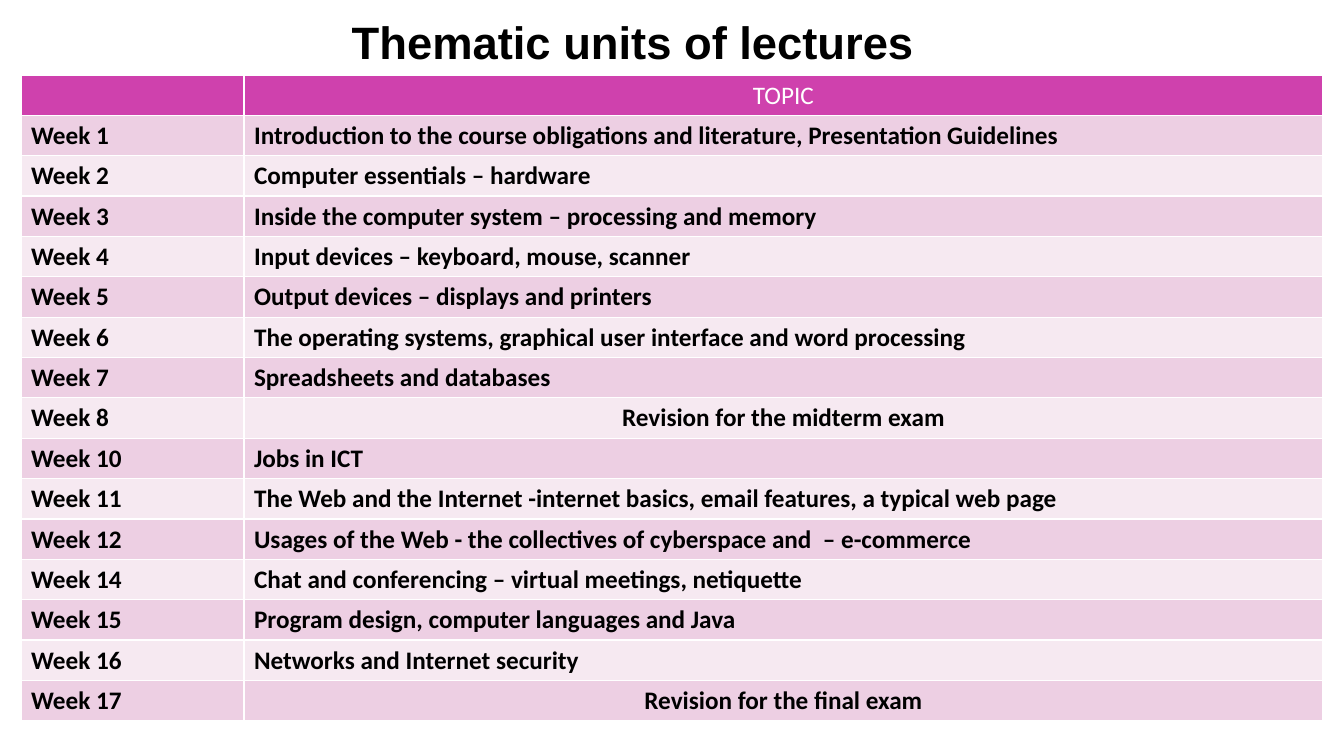
from pptx import Presentation
from pptx.dml.color import RGBColor
from pptx.enum.text import MSO_ANCHOR, PP_ALIGN
from pptx.util import Emu, Pt

TITLE = " Thematic units of lectures"
HEADER = ("", "TOPIC")
WEEKS = [
    ("Week 1", "Introduction to the course obligations and literature, Presentation Guidelines"),
    ("Week 2", "Computer essentials – hardware"),
    ("Week 3", "Inside the computer system – processing and memory"),
    ("Week 4", "Input devices – keyboard, mouse, scanner"),
    ("Week 5", "Output devices – displays and printers"),
    ("Week 6", "The operating systems, graphical user interface and word processing"),
    ("Week 7", "Spreadsheets and databases"),
    ("Week 8", "Revision for the midterm exam"),
    ("Week 10", "Jobs in ICT"),
    ("Week 11", "The Web and the Internet -internet basics, email features, a typical web page"),
    ("Week 12", "Usages of the Web - the collectives of cyberspace and  – e-commerce"),
    ("Week 14", "Chat and conferencing – virtual meetings, netiquette"),
    ("Week 15", "Program design, computer languages and Java"),
    ("Week 16", "Networks and Internet security"),
    ("Week 17", "Revision for the final exam"),
]

BLACK = RGBColor(0x00, 0x00, 0x00)
WHITE = RGBColor(0xFF, 0xFF, 0xFF)
MAGENTA = RGBColor(0xCF, 0x41, 0xAD)
BANDS = (RGBColor(0xF6, 0xE9, 0xF1), RGBColor(0xED, 0xCF, 0xE3))

TITLE_BOX = (137, 31, 979, 27)
TABLE_LEFT, TABLE_TOP = 21, 75
COL_WIDTHS = (223, 1079)
ROW_HEIGHT = 40


def px(n):
    return Emu(round(n * 914400 / 100.8))


def write(tf, text, font, size, color, bold, align):
    tf.text = text
    p = tf.paragraphs[0]
    p.alignment = align
    for f in [p.font] + [r.font for r in p.runs]:
        f.name, f.size, f.bold = font, Pt(size), bold
        f.color.rgb = color
    return p


def add_title(s):
    tf = s.shapes.add_textbox(*map(px, TITLE_BOX)).text_frame
    tf.word_wrap = True
    tf.vertical_anchor = MSO_ANCHOR.MIDDLE
    p = write(tf, TITLE, "Arial", 32.4, BLACK, True, PP_ALIGN.CENTER)
    p.line_spacing = 0.9


def add_schedule(s):
    rows = [HEADER] + WEEKS
    table = s.shapes.add_table(
        len(rows), len(COL_WIDTHS), px(TABLE_LEFT), px(TABLE_TOP),
        px(sum(COL_WIDTHS)), px(ROW_HEIGHT * len(rows))).table
    for column, width in zip(table.columns, COL_WIDTHS):
        column.width = px(width)
    for i, row in enumerate(rows):
        is_header = i == 0
        for j, text in enumerate(row):
            cell = table.cell(i, j)
            cell.fill.solid()
            cell.fill.fore_color.rgb = MAGENTA if is_header else BANDS[i % 2]
            centred = is_header or text.startswith("Revision")
            write(cell.text_frame, text, "Calibri", 18,
                  WHITE if is_header else BLACK, not is_header,
                  PP_ALIGN.CENTER if centred else PP_ALIGN.LEFT)


def main():
    prs = Presentation()
    prs.slide_width, prs.slide_height = px(1344), px(756)
    s = prs.slides.add_slide(prs.slide_layouts[6])
    add_title(s)
    add_schedule(s)
    prs.save("out.pptx")


if __name__ == "__main__":
    main()
